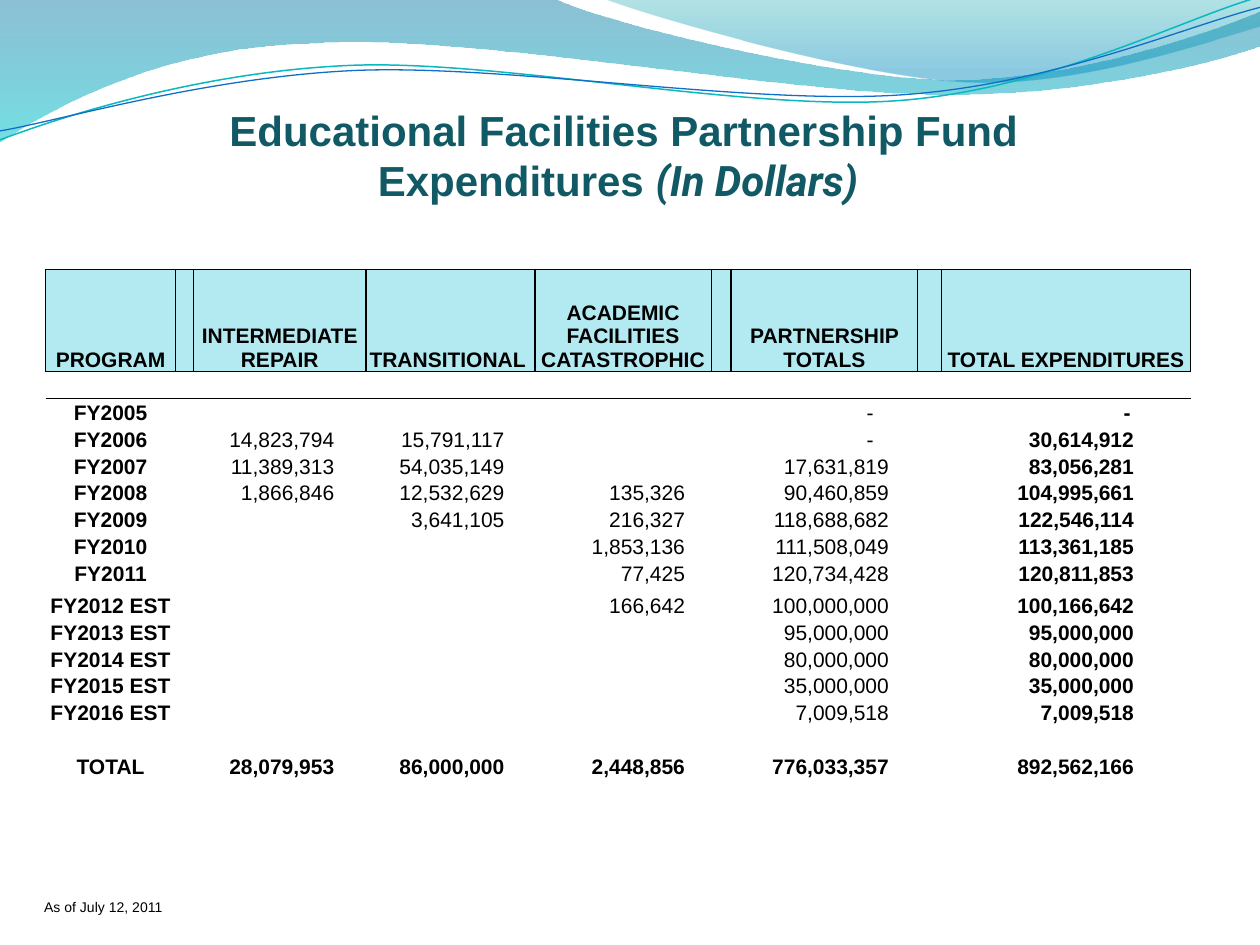
"""Build the slide of Educational Facilities Partnership Fund expenditures."""
from dataclasses import dataclass
from typing import Optional

from lxml import etree
from pptx import Presentation
from pptx.dml.color import RGBColor
from pptx.enum import text
from pptx.oxml.ns import qn
from pptx.util import Cm, Pt

BLACK = RGBColor(0x00, 0x00, 0x00)
WHITE = RGBColor(0xFF, 0xFF, 0xFF)
TITLE_TEAL = RGBColor(0x11, 0x59, 0x64)
HEADER_AQUA = RGBColor(0xB3, 0xEA, 0xF2)
DEEP_BLUE = RGBColor(0x00, 0x74, 0xA1)
CYAN = RGBColor(0x00, 0xC6, 0xCF)
SEA_GREEN = RGBColor(0x00, 0xA1, 0xA9)
SKY_BLUE = RGBColor(0x00, 0x8B, 0xBF)
LINE_TEAL = RGBColor(0x0A, 0xB8, 0xBF)
LINE_BLUE = RGBColor(0x0F, 0x6F, 0xC6)

PLAIN_TABLE_STYLE = "{2D5ABB26-0587-4C30-8999-92F81FD0307C}"
TABLE_SIZE = Pt(12)
ALL_SIDES = ("lnL", "lnR", "lnT", "lnB")


@dataclass(frozen=True)
class Stop:
    position: float
    color: RGBColor
    opacity: int


@dataclass(frozen=True)
class Wave:
    start: tuple
    segments: tuple
    stops: tuple = ()
    line_color: Optional[RGBColor] = None
    line_width: float = 0


@dataclass(frozen=True)
class Column:
    heading: str
    width: float
    right_inset: float = 0.03
    dash_inset: float = 0.03


WAVES = (
    Wave((0, 0), (
        ((11.18, -0.03),),
        ((12.09, 0.43), (16.87, 1.6), (19.25, 1.6)),
        ((21.67, 1.6), (24.33, 0.66), (25.4, 0.23)),
        ((25.43, 0.91),),
        ((24.97, 1.12), (22.1, 1.93), (18.95, 1.9)),
        ((15.8, 1.9), (9.7, 0.71), (6.53, 0.86)),
        ((3.28, 0.91), (1.17, 2.11), (-0.03, 2.87)),
    ), stops=(Stop(0, DEEP_BLUE, 45), Stop(1, CYAN, 55))),
    Wave((12.17, -0.03), (
        ((12.93, 0.28), (17.32, 1.57), (19.53, 1.65)),
        ((21.74, 1.75), (24.41, 0.81), (25.4, 0.53)),
        ((25.4, 0),),
    ), stops=(Stop(0, SEA_GREEN, 30), Stop(0.8, SKY_BLUE, 45))),
    Wave((0, 2.82), (
        ((1.22, 2.36), (4.01, 1.45), (7.04, 1.32)),
        ((10.03, 1.19), (15.06, 2.26), (18.11, 2.03)),
        ((21.16, 1.8), (23.83, 0.38), (25.35, -0.05)),
    ), line_color=LINE_TEAL, line_width=0.85),
    Wave((0, 2.64), (
        ((1.19, 2.44), (4.17, 1.55), (7.19, 1.42)),
        ((10.24, 1.3), (15.16, 2.13), (18.21, 1.91)),
        ((21.23, 1.7), (23.9, 0.53), (25.4, 0.15)),
    ), line_color=LINE_BLUE, line_width=0.75),
)

COLUMNS = (
    Column("PROGRAM", 2.62),
    Column("", 0.36),
    Column("INTERMEDIATE REPAIR", 3.48, 0.64),
    Column("TRANSITIONAL ", 3.4, 0.61),
    Column("ACADEMIC FACILITIES CATASTROPHIC", 3.56, 0.53),
    Column("", 0.4),
    Column("PARTNERSHIP TOTALS", 3.76, 0.58, 0.89),
    Column("", 0.48),
    Column("TOTAL EXPENDITURES", 5.02, 1.14, 1.21),
)
AMOUNT_COLUMNS = (0, 2, 3, 4, 6, 8)

EXPENDITURES = (
    (),
    ("FY2005", "", "", "", "-", "-"),
    ("FY2006", "14,823,794", "15,791,117", "", "-", "30,614,912"),
    ("FY2007", "11,389,313", "54,035,149", "", "17,631,819", "83,056,281"),
    ("FY2008", "1,866,846", "12,532,629", "135,326", "90,460,859", "104,995,661"),
    ("FY2009", "", "3,641,105", "216,327", "118,688,682", "122,546,114"),
    ("FY2010", "", "", "1,853,136", "111,508,049", "113,361,185"),
    ("FY2011", "", "", "77,425", "120,734,428", "120,811,853"),
    ("FY2012 EST", "", "", "166,642", "100,000,000", "100,166,642"),
    ("FY2013 EST", "", "", "", "95,000,000", "95,000,000"),
    ("FY2014 EST", "", "", "", "80,000,000", "80,000,000"),
    ("FY2015 EST", "", "", "", "35,000,000", "35,000,000"),
    ("FY2016 EST", "", "", "", "7,009,518", "7,009,518"),
    (),
    ("TOTAL", "28,079,953", "86,000,000", "2,448,856", "776,033,357", "892,562,166"),
    (),
)


def bend_segments(shape, segments: tuple) -> None:
    """Join each three consecutive line vertices of a curved segment into a Bézier curve."""
    vertices = iter(list(shape._element.iter(qn("a:lnTo"))))
    for segment in segments:
        lines = [next(vertices) for _ in segment]
        if len(lines) == 3:
            curve = etree.Element(qn("a:cubicBezTo"))
            lines[0].addprevious(curve)
            for line in lines:
                curve.append(line[0])
                line.getparent().remove(line)


def draw_wave(slide, wave: Wave) -> None:
    """Draw one wave as a translucent gradient area or an open line."""
    builder = slide.shapes.build_freeform(Cm(wave.start[0]), Cm(wave.start[1]))
    points = [(Cm(x), Cm(y)) for segment in wave.segments for x, y in segment]
    builder.add_line_segments(points, close=bool(wave.stops))
    shape = builder.convert_to_shape()
    bend_segments(shape, wave.segments)
    shape.shadow.inherit = False
    if not wave.stops:
        shape.fill.background()
        shape.line.color.rgb = wave.line_color
        shape.line.width = Pt(wave.line_width)
        return
    shape.fill.gradient()
    shape.fill.gradient_angle = 270
    for target, stop in zip(shape.fill.gradient_stops, wave.stops):
        target.position = stop.position
        target.color.rgb = stop.color
    for color, stop in zip(shape._element.iter(qn("a:srgbClr")), wave.stops):
        etree.SubElement(color, qn("a:alpha"), val=str(stop.opacity * 1000))
    shape.line.fill.background()


def set_font(font, size: int, color: RGBColor, bold: bool) -> None:
    """Apply the Arial face with a size, colour and weight."""
    font.name, font.size, font.bold = "Arial", size, bold
    font.color.rgb = color


def set_borders(cell, color: RGBColor, sides: tuple = ALL_SIDES) -> None:
    """Draw a one-point border on the given sides of a cell."""
    properties = cell._tc.get_or_add_tcPr()
    for index, side in enumerate(sides):
        line = etree.Element(qn(f"a:{side}"), w=str(Pt(1)))
        fill = etree.SubElement(line, qn("a:solidFill"))
        etree.SubElement(fill, qn("a:srgbClr"), val=str(color))
        properties.insert(index, line)


def fill_cell(cell, content: str, bold: bool, centered: bool, inset: float) -> None:
    """Write a bottom-anchored table cell."""
    cell.margin_left = cell.margin_top = Cm(0.03)
    cell.margin_right, cell.margin_bottom = Cm(inset), 0
    cell.vertical_anchor = text.MSO_ANCHOR.BOTTOM
    cell.fill.background()
    paragraph = cell.text_frame.paragraphs[0]
    paragraph.alignment = text.PP_ALIGN.CENTER if centered else text.PP_ALIGN.RIGHT
    set_font(paragraph.font, TABLE_SIZE, BLACK, bold)
    if content:
        paragraph.add_run().text = content
    else:
        etree.SubElement(paragraph._p, qn("a:endParaRPr"), sz="1200")


def draw_table(slide) -> None:
    """Draw the expenditure table."""
    heights = [2.06] + [0.66 if row[:1] == ("FY2012 EST",) else 0.53 for row in EXPENDITURES]
    table = slide.shapes.add_table(
        len(heights), len(COLUMNS), Cm(0.92), Cm(5.43),
        Cm(sum(column.width for column in COLUMNS)), Cm(sum(heights))).table
    table.first_row = table.horz_banding = False
    table._tbl.tblPr[0].text = PLAIN_TABLE_STYLE
    for row, height in zip(table.rows, heights):
        row.height = Cm(height)
    for index, column in enumerate(COLUMNS):
        table.columns[index].width = Cm(column.width)
        header = table.cell(0, index)
        fill_cell(header, column.heading, True, True, 0.03)
        header.fill.solid()
        header.fill.fore_color.rgb = HEADER_AQUA
        set_borders(header, BLACK)
        for number, entries in enumerate(EXPENDITURES, 1):
            content = dict(zip(AMOUNT_COLUMNS, entries)).get(index, "")
            bold = index in (0, 8) or entries[:1] == ("TOTAL",)
            inset = column.dash_inset if content == "-" else column.right_inset
            cell = table.cell(number, index)
            fill_cell(cell, content, bold, index == 0, inset)
            if number >= len(EXPENDITURES) - 1:
                set_borders(cell, WHITE)
        set_borders(table.cell(1, index), BLACK, ("lnT",))


def add_text_frame(slide, left: float, top: float, width: float, height: float):
    """Add a wrapping text box and return its text frame."""
    frame = slide.shapes.add_textbox(Cm(left), Cm(top), Cm(width), Cm(height)).text_frame
    frame.word_wrap = True
    return frame


def draw_title(slide) -> None:
    """Draw the two-line title."""
    frame = add_text_frame(slide, 1.98, 1.98, 20.96, 4.37)
    first, second = frame.paragraphs[0], frame.add_paragraph()
    for paragraph in (first, second):
        paragraph.alignment = text.PP_ALIGN.CENTER
        set_font(paragraph.font, Pt(24), TITLE_TEAL, True)
    first.add_run().text = " Educational Facilities Partnership Fund"
    second.add_run().text = "Expenditures "
    unit = second.add_run()
    unit.text = "(In Dollars)"
    unit.font.name, unit.font.italic = "Roboto", True


def main() -> None:
    """Build and save the presentation."""
    presentation = Presentation()
    presentation.slide_width, presentation.slide_height = Cm(25.4), Cm(19.05)
    slide = presentation.slides.add_slide(presentation.slide_layouts[6])
    for wave in WAVES:
        draw_wave(slide, wave)
    draw_title(slide)
    draw_table(slide)
    paragraph = add_text_frame(slide, 0.64, 17.98, 3.61, 0.61).paragraphs[0]
    paragraph.add_run().text = "As of July 12, 2011"
    set_font(paragraph.font, Pt(8), BLACK, False)
    presentation.save("out.pptx")


if __name__ == "__main__":
    main()
